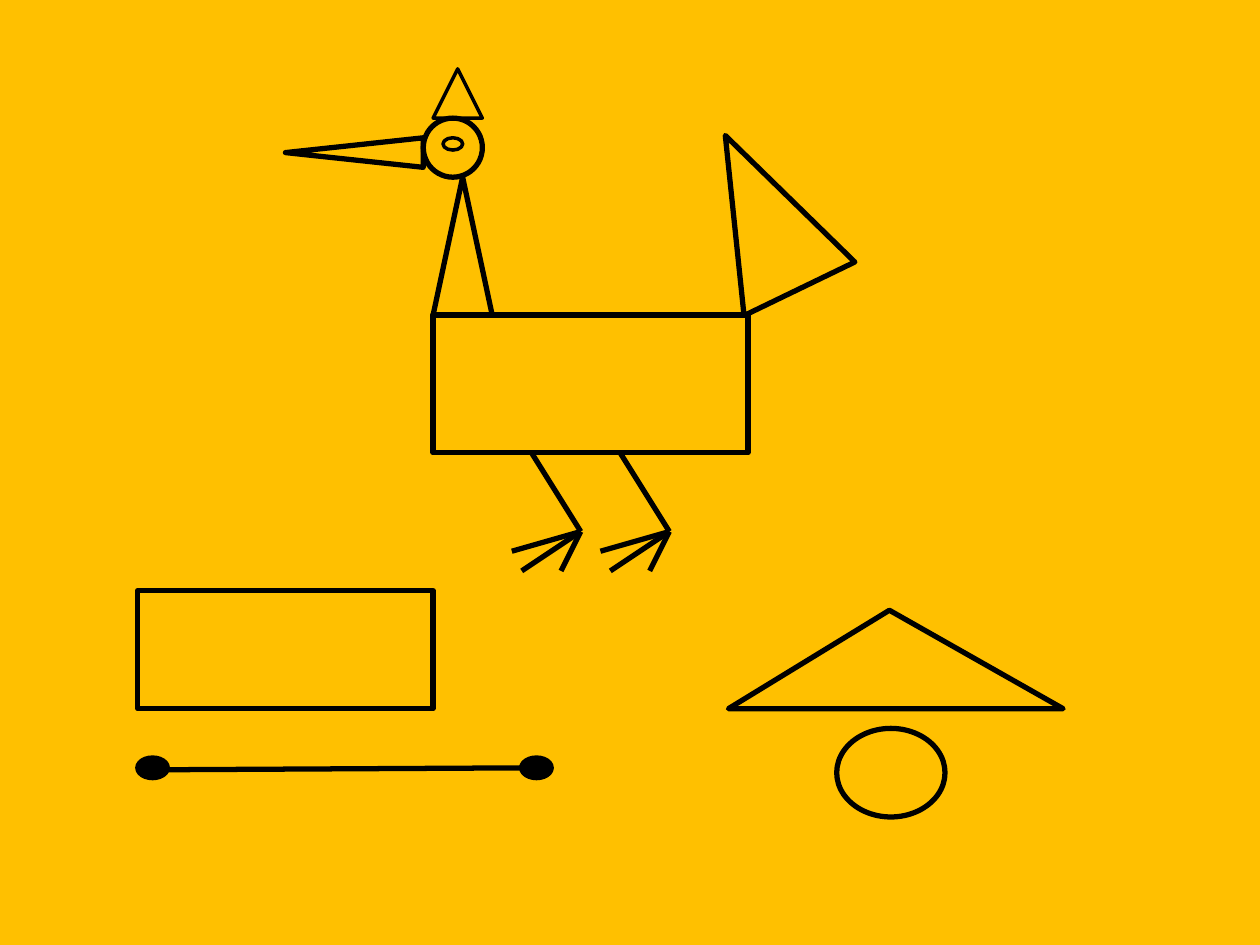
from typing import NamedTuple

from lxml.etree import SubElement
from pptx import Presentation
from pptx.dml.color import RGBColor
from pptx.enum.shapes import MSO_CONNECTOR, MSO_SHAPE
from pptx.oxml.ns import qn
from pptx.util import Inches, Pt

INK = RGBColor(0x00, 0x00, 0x00)
AMBER = RGBColor(0xFF, 0xC0, 0x00)
SLIDE_WIDTH, SLIDE_HEIGHT = Inches(10), Inches(7.5)
COLUMNS = 128
CELL = SLIDE_WIDTH / COLUMNS

RECTANGLE = MSO_SHAPE.RECTANGLE
TRIANGLE = MSO_SHAPE.ISOSCELES_TRIANGLE
OVAL = MSO_SHAPE.OVAL


class Outline(NamedTuple):
    """A preset shape; lengths are columns and rows of the grid."""
    kind: MSO_SHAPE
    column: float
    row: float
    width: float
    height: float
    weight: float = 3
    rotation: float = 0
    apex: float = 0.5
    filled: bool = False


class Stroke(NamedTuple):
    """A straight line between two grid points."""
    start: tuple[float, float]
    end: tuple[float, float]


BIRD = [
    Outline(RECTANGLE, 44, 32, 32, 14),                          # body
    Outline(TRIANGLE, 71.2, 12.9, 12.5, 17.3, rotation=334.2),   # tail
    Outline(TRIANGLE, 44, 18, 6, 14),                            # neck
    Outline(OVAL, 43, 12, 6, 6),                                 # head
    Outline(TRIANGLE, 44, 7, 5, 5, weight=2),                    # crest
    Outline(TRIANGLE, 34.5, 8.5, 3, 14, rotation=270),           # beak
    Outline(OVAL, 45, 14, 2, 1.25, weight=2),                    # eye
]
SAMPLE_FIGURES = [
    Outline(RECTANGLE, 14, 60, 30, 12),
    Outline(TRIANGLE, 74, 62, 34, 10, apex=0.481),
    Outline(OVAL, 85, 74, 11, 9),
]
SEGMENT = Stroke((17, 78.2), (54.2, 78))
SEGMENT_ENDS = [Outline(OVAL, column, 77, 3, 2, filled=True) for column in (53, 14)]

HIP_COLUMNS = (63, 54)
HIP_ROW = 46
ANKLE = (5, 8)  # from the hip
TOES = [(-1, 12), (-2, 10), (3, 12)]  # from the hip


def cells(*counts: float) -> list[int]:
    """Grid counts as lengths."""
    return [round(count * CELL) for count in counts]


def draw_outline(shapes, outline: Outline) -> None:
    shape = shapes.add_shape(outline.kind, *cells(*outline[1:5]))
    shape.rotation = outline.rotation
    shape.shadow.inherit = False
    if outline.kind == TRIANGLE:
        shape.adjustments[0] = outline.apex
    if outline.filled:
        shape.fill.solid()
        shape.fill.fore_color.rgb = INK
    else:
        shape.fill.background()
    shape.line.color.rgb = INK
    shape.line.width = Pt(outline.weight)


def draw_stroke(shapes, stroke: Stroke) -> None:
    connector = shapes.add_connector(
        MSO_CONNECTOR.STRAIGHT, *cells(*stroke.start, *stroke.end))
    connector.line.color.rgb = INK
    connector.line.width = Pt(3)
    SubElement(connector._element.spPr, qn("a:effectLst"))


def draw_leg(shapes, hip_column: float) -> None:
    leg = shapes.add_group_shape()

    def from_hip(offset: tuple[float, float]) -> tuple[float, float]:
        return hip_column + offset[0], HIP_ROW + offset[1]

    ankle = from_hip(ANKLE)
    draw_stroke(leg.shapes, Stroke((hip_column, HIP_ROW), ankle))
    for toe in TOES:
        draw_stroke(leg.shapes, Stroke(ankle, from_hip(toe)))


def main() -> None:
    deck = Presentation()
    deck.slide_width, deck.slide_height = SLIDE_WIDTH, SLIDE_HEIGHT
    slide = deck.slides.add_slide(deck.slide_layouts.get_by_name("Blank"))
    slide.background.fill.solid()
    slide.background.fill.fore_color.rgb = AMBER

    for outline in BIRD + SAMPLE_FIGURES:
        draw_outline(slide.shapes, outline)
    draw_stroke(slide.shapes, SEGMENT)
    for end in SEGMENT_ENDS:
        draw_outline(slide.shapes, end)
    for hip_column in HIP_COLUMNS:
        draw_leg(slide.shapes, hip_column)
    deck.save("out.pptx")


if __name__ == "__main__":
    main()
